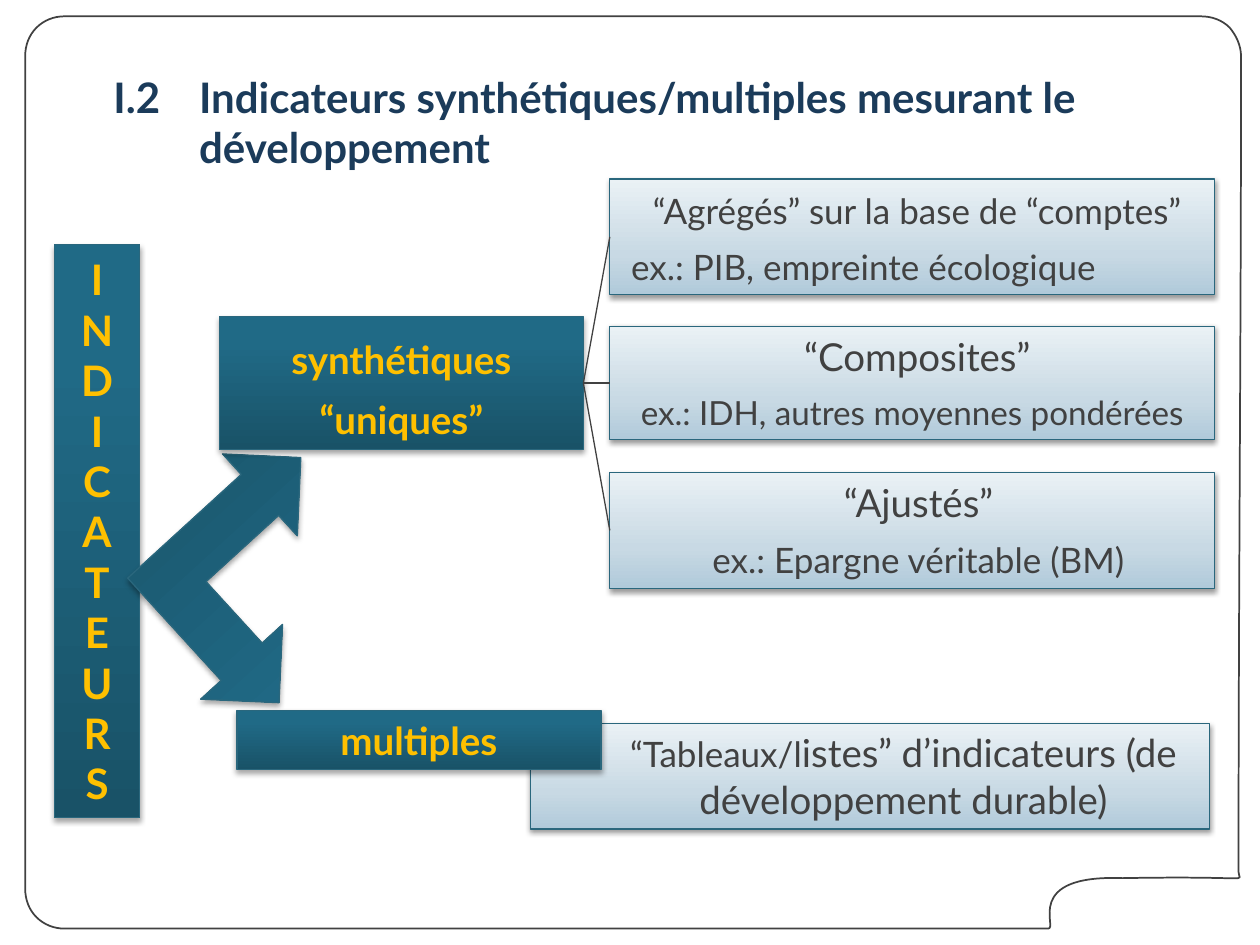
"""Build a slide that sorts development indicators into single and multiple ones."""
from copy import deepcopy
from dataclasses import dataclass
from itertools import chain

from lxml.etree import SubElement
from pptx import Presentation
from pptx.dml.color import RGBColor
from pptx.enum.shapes import MSO_CONNECTOR as Connector, MSO_SHAPE as Preset
from pptx.enum.text import MSO_ANCHOR as Anchor, MSO_AUTO_SIZE as AutoSize, PP_ALIGN as Align
from pptx.oxml.ns import qn
from pptx.util import Inches, Pt

FONT = "Lato"
WHITE = RGBColor(0xFF, 0xFF, 0xFF)
NAVY = RGBColor(0x1B, 0x3B, 0x5A)
GREY = RGBColor(0x41, 0x41, 0x41)
GOLD = RGBColor(0xFF, 0xC0, 0x00)
EDGE = RGBColor(0x2A, 0x67, 0x7D)


@dataclass(frozen=True)
class Style:
    stops: tuple
    shadow_alpha: int
    shadow_distance: float
    color: RGBColor
    bold: bool


@dataclass(frozen=True)
class Line:
    spans: tuple
    align: Align = Align.CENTER
    margin: float = 0
    indent: float = 0
    spacing: float = 1.0


@dataclass(frozen=True)
class Box:
    left: float
    top: float
    width: float
    height: float
    style: Style
    lines: tuple = ()
    anchor: Anchor = Anchor.TOP
    preset: Preset = Preset.RECTANGLE
    rotation: float = 0


DARK = Style(((0, RGBColor(0x19, 0x52, 0x67)), (0.8, RGBColor(0x20, 0x6A, 0x86)),
              (1, RGBColor(0x1E, 0x6C, 0x88))), 35, 1.8, GOLD, True)
LIGHT = Style(((0, RGBColor(0xB0, 0xCA, 0xDA)), (0.35, RGBColor(0xC8, 0xD9, 0xE4)),
               (1, RGBColor(0xEA, 0xF1, 0xF5))), 38, 1.6, GREY, False)

HUB = (4.63, 3.04)
DETAIL_LEFT, DETAIL_WIDTH = 4.84, 4.8
DETAIL_TOPS, DETAIL_HEIGHTS = (1.42, 2.59, 3.75), (0.92, 0.9, 0.92)
HANG = 0.53
DETAILS = (
    (Line((("“Agrégés” sur la base de “comptes”", 20),), margin=HANG, indent=-0.45, spacing=1.1),
     Line((("ex.: PIB, empreinte écologique", 20),), Align.LEFT, 0.6, -HANG)),
    (Line((("“Composites”", 22),), margin=HANG, indent=-0.45),
     Line((("ex.: IDH, autres moyennes pondérées", 19),), margin=HANG, indent=-HANG)),
    (Line((("“Ajustés”", 22),), margin=HANG, indent=-0.43),
     Line((("ex.: Epargne véritable (BM)", 20),), margin=HANG, indent=-0.43)),
)
BOXES = (
    Box(0.43, 1.94, 0.68, 4.55, DARK, (Line((("\n".join("INDICATEURS"), 24),)),), Anchor.MIDDLE),
    Box(1.05, 3.71, 1.88, 1.76, DARK, preset=Preset.LEFT_UP_ARROW, rotation=137.6),
    Box(1.74, 2.51, 2.89, 1.06, DARK, (Line((("synthétiques\n“uniques”", 22),), spacing=1.3),)),
    *(Box(DETAIL_LEFT, top, DETAIL_WIDTH, height, LIGHT, lines)
      for top, height, lines in zip(DETAIL_TOPS, DETAIL_HEIGHTS, DETAILS)),
    Box(4.21, 5.74, 5.39, 0.84, LIGHT,
        (Line((("\t“Tableaux/l", 20), ("istes” d’indicateurs (de développement durable)", 22)),
              margin=HANG, indent=-HANG),)),
    Box(1.88, 5.64, 2.89, 0.47, DARK, (Line((("multiples", 22),)),)),
)
FRAME_START = (0.2, 0.45)
FRAME = (
    ((0.2, 0.36), (0.23, 0.28), (0.29, 0.22)),
    ((0.35, 0.16), (0.43, 0.13), (0.51, 0.13)),
    ((9.53, 0.13),),
    ((9.62, 0.13), (9.7, 0.16), (9.76, 0.22)),
    ((9.81, 0.28), (9.85, 0.36), (9.85, 0.45)),
    ((9.85, 2.65), (9.83, 4.72), (9.83, 6.92)),
    ((9.83, 7.01), (10, 6.95), (8.91, 6.97)),
    ((8.11, 6.94), (8.4, 7.37), (8.32, 7.37)),
    ((0.51, 7.37),),
    ((0.43, 7.37), (0.35, 7.34), (0.29, 7.28)),
    ((0.23, 7.22), (0.2, 7.14), (0.2, 7.05)),
    ((0.2, 4.85), (0.2, 2.65), FRAME_START),
)


def write(para, text: str, *, size: float, color: RGBColor, bold: bool = False) -> None:
    """Add text to a paragraph, with a line break at each newline."""
    for number, part in enumerate(text.split("\n")):
        if number:
            para.add_line_break()
        span = para.add_run()
        span.text = part
        span.font.name, span.font.size, span.font.bold = FONT, Pt(size), bold
        span.font.color.rgb = color


def set_indent(para, margin: float, indent: float) -> None:
    """Set the left margin and the first-line indent of a paragraph."""
    properties = para._p.get_or_add_pPr()
    properties.set("marL", str(Inches(margin)))
    properties.set("indent", str(Inches(indent)))


def paint(shape, style: Style) -> None:
    """Give a shape its gradient, outline and soft shadow."""
    shape.fill.gradient()
    shape.fill.gradient_angle = 90
    stop_list = shape._element.spPr.find(".//" + qn("a:gsLst"))
    stop_list.append(deepcopy(stop_list[-1]))
    for stop, (position, color) in zip(shape.fill.gradient_stops, style.stops):
        stop.position, stop.color.rgb = position, color
    shape.line.color.rgb, shape.line.width = EDGE, Pt(0.75)
    effects = SubElement(shape._element.spPr, qn("a:effectLst"))
    shadow = SubElement(effects, qn("a:outerShdw"), blurRad=str(Pt(3.1)),
                        dist=str(Pt(style.shadow_distance)), dir="5400000", rotWithShape="0")
    tone = SubElement(shadow, qn("a:srgbClr"), val="000000")
    SubElement(tone, qn("a:alpha"), val=str(style.shadow_alpha * 1000))


def draw_box(page, box: Box) -> None:
    """Draw one painted shape with its lines of text."""
    shape = page.shapes.add_shape(box.preset, Inches(box.left), Inches(box.top),
                                  Inches(box.width), Inches(box.height))
    shape.rotation = box.rotation
    paint(shape, box.style)
    frame = shape.text_frame
    frame.word_wrap, frame.vertical_anchor = True, box.anchor
    for number, line in enumerate(box.lines):
        para = frame.add_paragraph() if number else frame.paragraphs[0]
        set_indent(para, line.margin, line.indent)
        para.alignment, para.line_spacing = line.align, line.spacing
        para.space_before = Pt(8 if number else 0)
        for text, size in line.spans:
            write(para, text, size=size, color=box.style.color, bold=box.style.bold)


def draw_link(page, start: tuple, end: tuple) -> None:
    """Draw a thin straight line between two points."""
    link = page.shapes.add_connector(Connector.STRAIGHT, *map(Inches, start + end))
    link.line.color.rgb, link.line.width = GREY, Pt(0.75)
    SubElement(link._element.spPr, qn("a:effectLst"))


def draw_frame(page) -> None:
    """Draw the page outline with its curled corner behind everything."""
    builder = page.shapes.build_freeform(*map(Inches, FRAME_START))
    builder.add_line_segments([tuple(map(Inches, point)) for point in chain(*FRAME)], close=True)
    frame = builder.convert_to_shape()
    steps = iter(list(frame._element.iter(qn("a:lnTo"))))
    for segment in FRAME:
        group = [next(steps) for _ in segment]
        if len(group) == 3:
            curve = group[0].makeelement(qn("a:cubicBezTo"))
            group[0].addprevious(curve)
            for step in group:
                curve.append(step[0])
                step.getparent().remove(step)
    frame.fill.solid()
    frame.fill.fore_color.rgb = WHITE
    frame.line.color.rgb, frame.line.width = GREY, Pt(1)
    frame.shadow.inherit = False
    page.shapes.title._element.addprevious(frame._element)


def draw_title(page) -> None:
    """Place and fill the title."""
    title = page.shapes.title
    title.left, title.top, title.width, title.height = map(Inches, (0.86, 0.31, 8.27, 1.31))
    frame = title.text_frame
    frame.auto_size, frame.vertical_anchor, frame.word_wrap = AutoSize.NONE, Anchor.MIDDLE, True
    frame.margin_left = frame.margin_right = frame.margin_top = frame.margin_bottom = Inches(0.04)
    para = frame.paragraphs[0]
    para.alignment = Align.LEFT
    set_indent(para, 0.68, -0.68)
    write(para, "I.2\tIndicateurs synthétiques/multiples mesurant le développement",
          size=24, color=NAVY, bold=True)


def main() -> None:
    """Build and save the deck."""
    deck = Presentation()
    deck.slide_width, deck.slide_height = Inches(10), Inches(7.5)
    page = deck.slides.add_slide(deck.slide_layouts[5])
    draw_title(page)
    draw_frame(page)
    for box in BOXES:
        draw_box(page, box)
    for top, height in zip(DETAIL_TOPS, DETAIL_HEIGHTS):
        draw_link(page, HUB, (DETAIL_LEFT, top + height / 2))
    deck.save("out.pptx")


if __name__ == "__main__":
    main()
